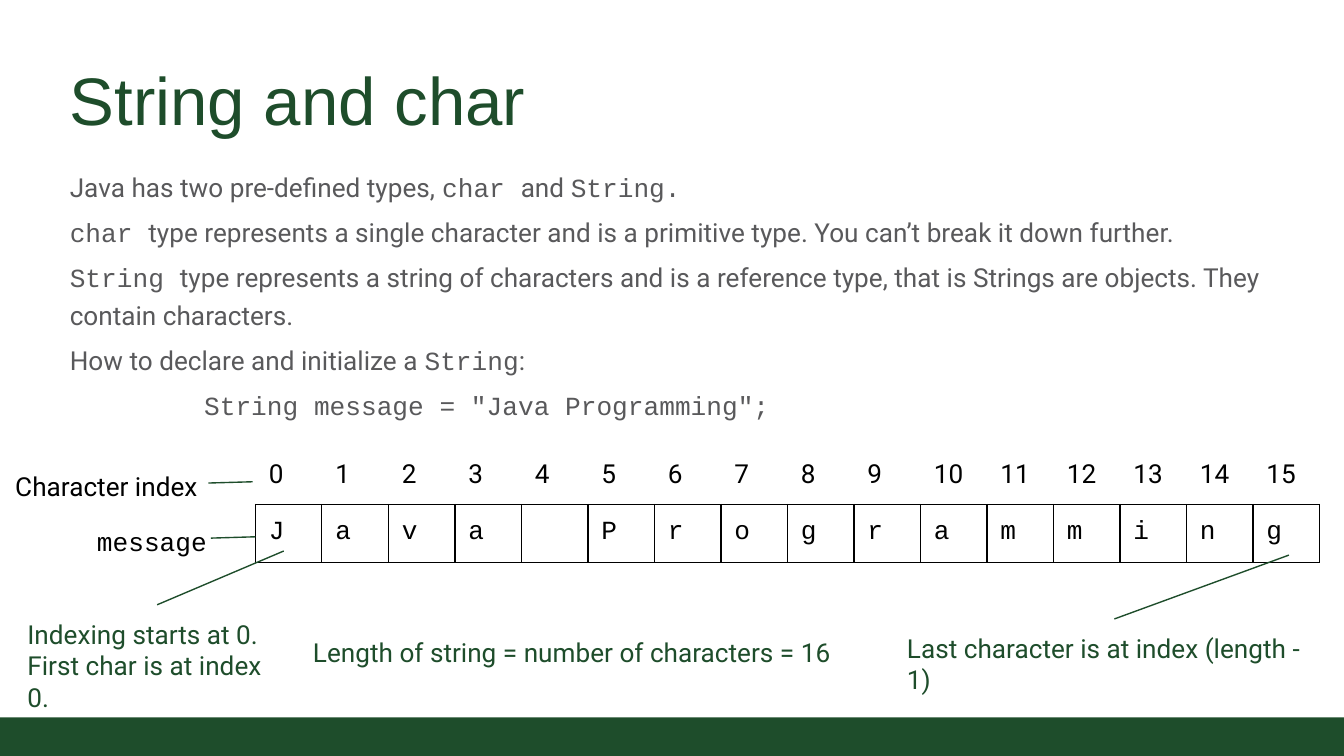
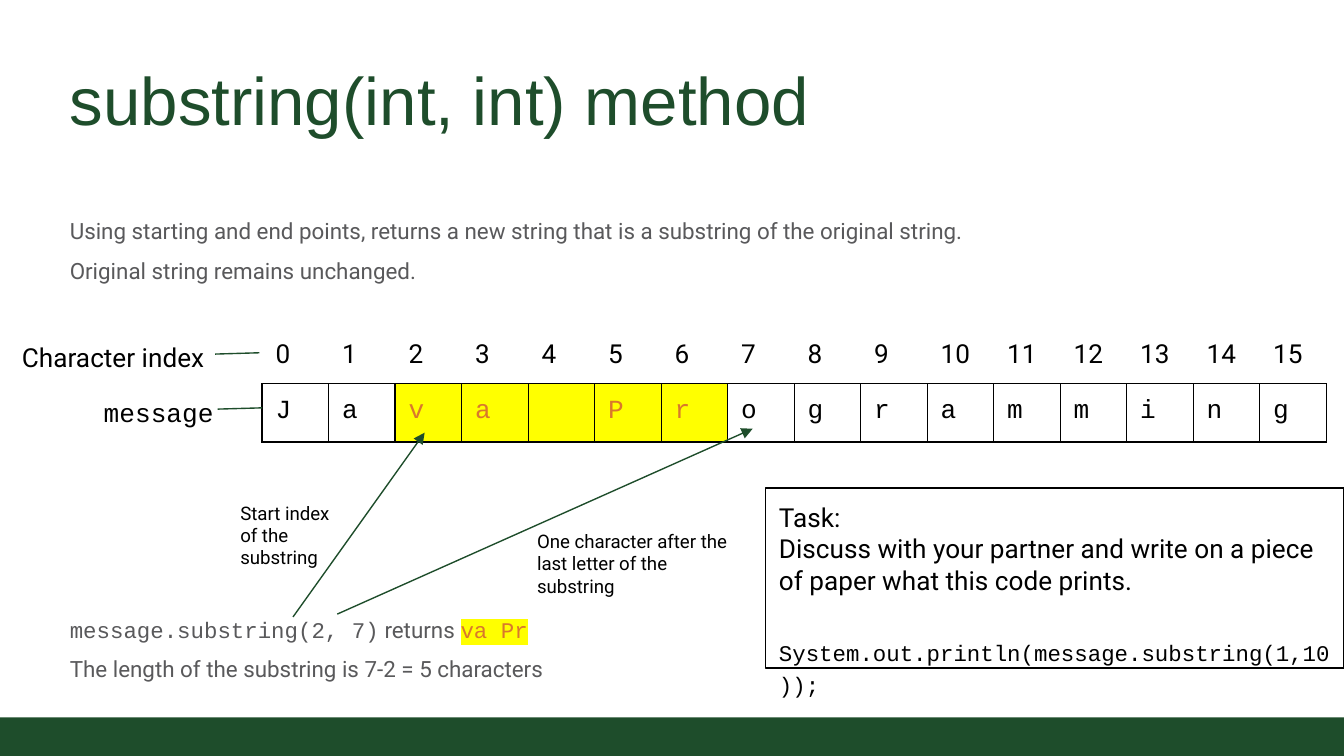
import pptx
import pptx.dml.color
import pptx.enum.shapes
import pptx.enum.text
import pptx.oxml.ns
import pptx.util
from lxml import etree

Pt = pptx.util.Pt
ALIGN = pptx.enum.text.PP_ALIGN
ANCHOR = pptx.enum.text.MSO_ANCHOR
RECTANGLE = pptx.enum.shapes.MSO_SHAPE.RECTANGLE
qn = pptx.oxml.ns.qn

GREEN, GRAY, BLACK, WHITE = "1E4D2B", "59595B", "000000", "FFFFFF"
ORANGE, YELLOW = "D9782C", "FFFF00"
TITLE_FONT, TEXT_FONT, CODE_FONT = "Arial", "Roboto", "Courier New"
MESSAGE = "Java Programming"
COLUMN_WIDTH, ROW_HEIGHT = 35.64, 30.5
LINE_WIDTH = 0.75


def color(value):
    return pptx.dml.color.RGBColor.from_string(value)


def add_element(parent, tag, **attributes):
    return etree.SubElement(parent, qn(tag), attributes)


def set_font(font, name, size, value):
    font.name = name
    font.size = Pt(size)
    font.color.rgb = color(value)


def write_paragraph(paragraph, text, size, value, font=TEXT_FONT):
    """Parts between backticks are set in the code font."""
    parts = [(part, CODE_FONT if index % 2 else font)
             for index, part in enumerate(text.split("`")) if part]
    main_font = parts[0][1]
    uniform = all(name == main_font for _, name in parts)
    set_font(paragraph.font, main_font, size, value)
    for part, name in parts:
        run = paragraph.add_run()
        run.text = part
        if not uniform:
            run.font.name = name


def prepare_frame(frame, inset, anchor=ANCHOR.TOP):
    frame.word_wrap = True
    frame.vertical_anchor = anchor
    frame.margin_left = frame.margin_right = Pt(inset)
    frame.margin_top = frame.margin_bottom = Pt(inset)


def write_lines(frame, lines, size, value, font=TEXT_FONT, align=ALIGN.LEFT):
    for index, line in enumerate(lines):
        paragraph = frame.add_paragraph() if index else frame.paragraphs[0]
        paragraph.alignment = align
        write_paragraph(paragraph, line, size, value, font)
    return frame.paragraphs


def add_text(slide, box, lines, size, value, font=TEXT_FONT, inset=7.2,
             align=ALIGN.LEFT, anchor=ANCHOR.TOP):
    shape = slide.shapes.add_textbox(*map(Pt, box))
    prepare_frame(shape.text_frame, inset, anchor)
    return write_lines(shape.text_frame, lines, size, value, font, align)


def add_body(slide, top, height, lines, size):
    paragraphs = add_text(slide, (32.4, top, 654.5, height), lines, size, GRAY,
                          inset=5)
    for index, paragraph in enumerate(paragraphs):
        paragraph.line_spacing = 1.2
        if index:
            paragraph.space_before = Pt(4)
    return paragraphs


def add_line(slide, start, end, arrow=False):
    line = slide.shapes.add_connector(
        pptx.enum.shapes.MSO_CONNECTOR.STRAIGHT, *map(Pt, start + end))
    line.line.color.rgb = color(GREEN)
    line.line.width = Pt(LINE_WIDTH)
    if arrow:
        add_element(line.line._get_or_add_ln(), "a:tailEnd", type="triangle")
    add_element(line._element.spPr, "a:effectLst")


def add_rectangle(slide, box, fill=None, line=None):
    shape = slide.shapes.add_shape(RECTANGLE, *map(Pt, box))
    shape.shadow.inherit = False
    if fill:
        shape.fill.solid()
        shape.fill.fore_color.rgb = color(fill)
    else:
        shape.fill.background()
    if line:
        shape.line.color.rgb = color(line)
        shape.line.width = Pt(LINE_WIDTH)
    else:
        shape.line.fill.background()
    return shape


def highlight(run, text_color, back_color):
    run.font.color.rgb = color(text_color)
    properties = run.font._element if hasattr(run.font, "_element") else run._r.rPr
    marker = add_element(properties, "a:highlight")
    add_element(marker, "a:srgbClr", val=back_color)
    properties.find(qn("a:solidFill")).addnext(marker)


def set_borders(cell, edge_color):
    properties = cell._tc.get_or_add_tcPr()
    for side in ("L", "R", "T", "B"):
        border = add_element(properties, "a:ln" + side, w=str(Pt(LINE_WIDTH)))
        fill = add_element(border, "a:solidFill")
        add_element(fill, "a:srgbClr", val=BLACK if side == "B" else edge_color)


def fill_cell(cell, text, font, text_color, edge_color, back_color=None):
    cell.margin_left = cell.margin_right = Pt(7.2)
    cell.margin_top = cell.margin_bottom = Pt(7.2)
    set_borders(cell, edge_color)
    if back_color:
        cell.fill.solid()
        cell.fill.fore_color.rgb = color(back_color)
    else:
        cell.fill.background()
    paragraph = cell.text_frame.paragraphs[0]
    if text:
        write_paragraph(paragraph, text, 14, text_color, font)
    else:
        add_element(paragraph._p, "a:endParaRPr", sz="1400")


def add_character_table(slide, left, top, marked):
    count = len(MESSAGE)
    table = slide.shapes.add_table(
        2, count, Pt(left), Pt(top), Pt(COLUMN_WIDTH * count),
        Pt(ROW_HEIGHT * 2)).table
    table.first_row = table.horz_banding = False
    for row in table.rows:
        row.height = Pt(ROW_HEIGHT)
    for index, character in enumerate(MESSAGE):
        table.columns[index].width = Pt(COLUMN_WIDTH)
        fill_cell(table.cell(0, index), str(index), TEXT_FONT, BLACK, WHITE)
        text_color, back_color = (
            (ORANGE, YELLOW) if index in marked else (BLACK, None))
        fill_cell(table.cell(1, index), character.strip(), CODE_FONT,
                  text_color, BLACK, back_color)


def add_string_diagram(slide, left, top, label_top, marked=()):
    add_character_table(slide, left, top, marked)
    label_left = left - 136.8
    for label, offset, width, gap in (("Character index", 0, 113, 1.4),
                                      ("`message`", 29.5, 118, 0)):
        add_text(slide, (label_left, label_top + offset, width, 25), [label],
                 14, BLACK, align=ALIGN.RIGHT)
        line_y = label_top + offset + 14
        add_line(slide, (left - 23.8 - gap, line_y),
                 (left - gap, line_y - 0.7))


def add_slide(presentation, title):
    slide = presentation.slides.add_slide(presentation.slide_layouts[6])
    add_rectangle(slide, (0, 384.3, 720, 20.7), fill=GREEN)
    add_text(slide, (32.4, 27, 654.5, 52.5), [title], 36, GREEN, TITLE_FONT,
             inset=5, anchor=ANCHOR.BOTTOM)
    return slide


def build_string_slide(presentation):
    slide = add_slide(presentation, "String and char")
    paragraphs = add_body(slide, 83.5, 122.4, [
        "Java has two pre-defined types, `char `and `String.`",
        "`char `type represents a single character and is a primitive type. "
        "You can’t break it down further.",
        "`String `type represents a string of characters and is a reference "
        "type, that is Strings are objects. They contain characters.",
        "How to declare and initialize a `String`:",
        '`String message = "Java Programming";`',
    ], 14)
    paragraphs[-1]._p.get_or_add_pPr().set("marL", str(Pt(72)))
    add_string_diagram(slide, 136.8, 239, 244.8)
    for box, lines in (
        ((160.6, 334, 357, 25), ["Length of string = number of characters = 16"]),
        ((7.6, 324, 152.6, 44.6),
         ["Indexing starts at 0.", "First char is at index 0."]),
        ((478.8, 331.6, 237, 25), ["Last character is at index (length - 1)"]),
    ):
        add_text(slide, box, lines, 14, GREEN)
    add_line(slide, (84.2, 324), (152, 295.2))
    add_line(slide, (597, 331.6), (690.5, 297.4))


def build_substring_slide(presentation):
    slide = add_slide(presentation, "substring(int, int) method")
    add_body(slide, 108.7, 52, [
        "Using starting and end points, returns a new string that is a "
        "substring of the original string.",
        "Original string remains unchanged.",
    ], 12)
    result = add_body(slide, 322, 52, [
        "`message.substring(2, 7)` returns `va Pr`",
        "The length of the substring is 7-2 = 5 characters",
    ], 12)[0]
    highlight(result.runs[-1], ORANGE, YELLOW)
    add_string_diagram(slide, 140.4, 174.3, 175.7, range(2, 7))
    add_line(slide, (157, 330.5), (227.5, 231.8), arrow=True)
    add_line(slide, (180.7, 329), (403.2, 229.7), arrow=True)
    add_text(slide, (280.6, 276.5, 123, 43),
             ["One character after the", "last letter of the substring"],
             10, BLACK)
    add_text(slide, (121.7, 261.4, 67, 43), ["Start index of the substring"],
             10, BLACK)
    add_task(slide)


def add_task(slide):
    box = add_rectangle(slide, (410.2, 261.4, 309.8, 96.5), line=BLACK)
    prepare_frame(box.text_frame, 7.2)
    write_lines(box.text_frame, [
        "Task:",
        "Discuss with your partner and write on a piece of paper what this "
        "code prints.",
    ], 14, BLACK)
    code = box.text_frame.add_paragraph()
    code.alignment = ALIGN.LEFT
    code.line_spacing = 1.2
    code.space_before = Pt(20.4)
    write_paragraph(code, "`System.out.println(message.substring(1,10));`",
                    12, BLACK)


def main():
    presentation = pptx.Presentation()
    presentation.slide_width = Pt(720)
    presentation.slide_height = Pt(405)
    build_string_slide(presentation)
    build_substring_slide(presentation)
    presentation.save("out.pptx")


if __name__ == "__main__":
    main()
